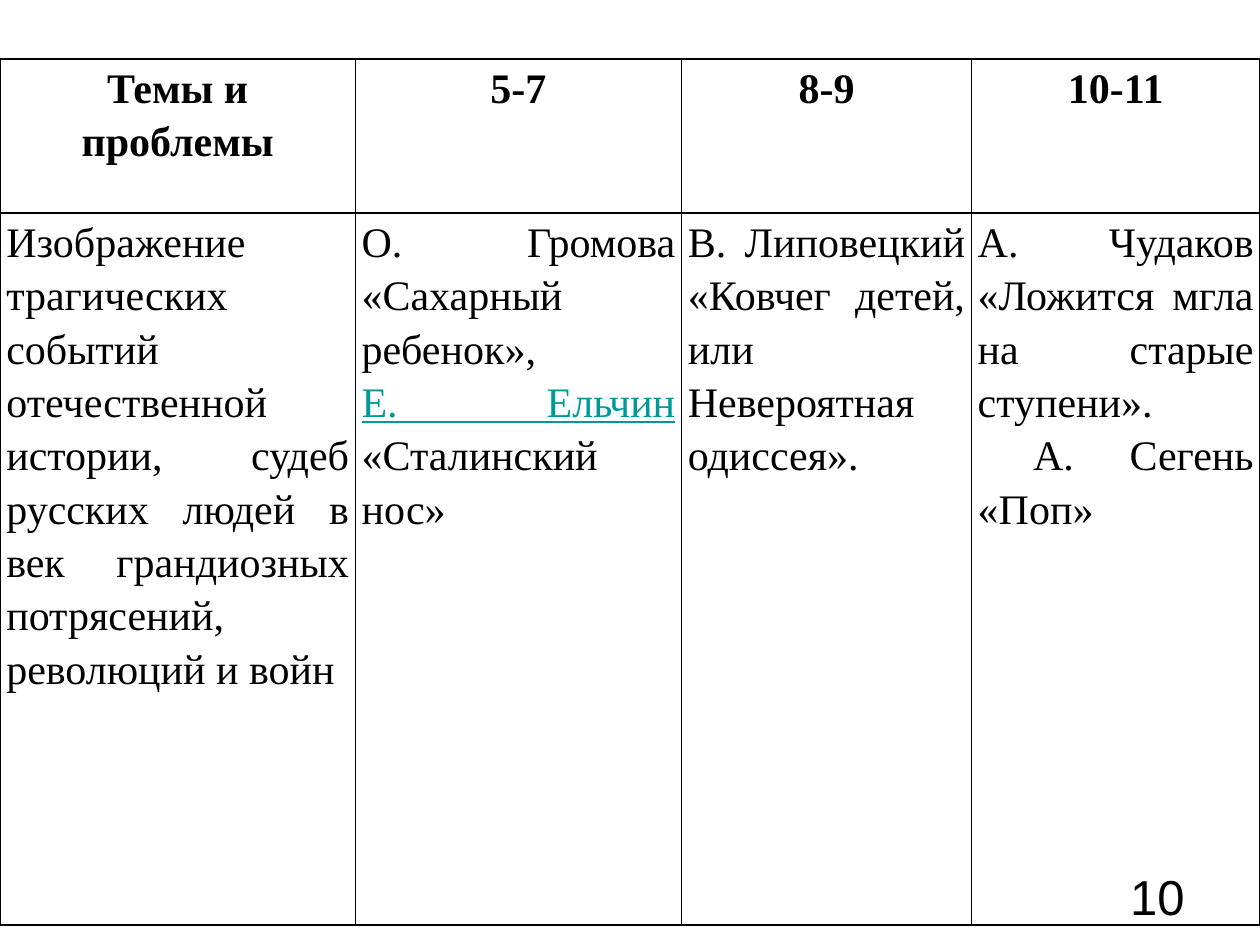
from dataclasses import dataclass
from typing import Optional

from lxml.etree import SubElement
from pptx import Presentation
from pptx.dml.color import RGBColor
from pptx.enum.text import PP_ALIGN as Align
from pptx.oxml.ns import qn
from pptx.util import Inches, Pt


@dataclass(frozen=True)
class Theme:
    text: str = "000000"
    link: str = "009999"
    table_font: str = "Times New Roman"
    number_font: str = "Arial"
    table_size: int = 24
    number_size: int = 28
    line_spacing: float = 1.15
    border_width: int = 1
    cell_margin: float = 0.05


@dataclass(frozen=True)
class Line:
    text: str
    link: str = ""
    indent: float = 0


@dataclass(frozen=True)
class Column:
    share: float
    heading: str
    body: tuple[Line, ...]


THEME = Theme()
SLIDE_WIDTH, SLIDE_HEIGHT = Inches(10), Inches(7.5)
TABLE_TOP = 0.47
ROW_HEIGHTS = (1.22, 5.65)
COLUMNS = (
    Column(0.282, "Темы и проблемы", (
        Line("Изображение трагических событий отечественной истории, судеб "
             "русских людей в век грандиозных потрясений, революций и войн"),
    )),
    Column(0.259, "5-7", (
        Line("О. Громова «Сахарный ребенок»,"),
        Line(" «Сталинский нос»", link="Е. Ельчин"),
    )),
    Column(0.23, "8-9", (
        Line("В. Липовецкий «Ковчег детей, или Невероятная одиссея»."),
    )),
    Column(0.229, "10-11", (
        Line("А. Чудаков «Ложится мгла на старые ступени»."),
        Line("А. Сегень «Поп»", indent=0.44),
    )),
)


def style_paragraph(paragraph, font_name: str, size: int, alignment, bold: bool = False) -> None:
    paragraph.alignment = alignment
    font = paragraph.font
    font.name, font.size, font.bold = font_name, Pt(size), bold
    font.color.rgb = RGBColor.from_string(THEME.text)


def add_borders(cell) -> None:
    properties = cell._tc.get_or_add_tcPr()
    for position, side in enumerate(("a:lnL", "a:lnR", "a:lnT", "a:lnB")):
        line = SubElement(properties, qn(side), w=str(Pt(THEME.border_width)))
        fill = SubElement(line, qn("a:solidFill"))
        SubElement(fill, qn("a:srgbClr"), val=THEME.text)
        properties.insert(position, line)


def fill_cell(cell, lines: tuple[Line, ...], alignment, bold: bool = False) -> None:
    cell.fill.background()
    cell.margin_left = cell.margin_right = Inches(THEME.cell_margin)
    cell.margin_top = cell.margin_bottom = 0
    add_borders(cell)
    frame = cell.text_frame
    for index, line in enumerate(lines):
        paragraph = frame.add_paragraph() if index else frame.paragraphs[0]
        paragraph.line_spacing = THEME.line_spacing
        if line.indent:
            paragraph._p.get_or_add_pPr().set("indent", str(Inches(line.indent)))
        style_paragraph(paragraph, THEME.table_font, THEME.table_size, alignment, bold)
        if line.link:
            link = paragraph.add_run()
            link.text = line.link
            link.font.underline = True
            link.font.color.rgb = RGBColor.from_string(THEME.link)
        paragraph.add_run().text = line.text


def add_reading_table(slide, columns: tuple[Column, ...], theme: Optional[Theme] = None) -> None:
    table = slide.shapes.add_table(
        len(ROW_HEIGHTS), len(columns), 0, Inches(TABLE_TOP),
        SLIDE_WIDTH, Inches(sum(ROW_HEIGHTS))).table
    table.first_row = table.horz_banding = False
    for row, height in zip(table.rows, ROW_HEIGHTS):
        row.height = Inches(height)
    for index, column in enumerate(columns):
        table.columns[index].width = round(SLIDE_WIDTH * column.share)
        fill_cell(table.cell(0, index), (Line(column.heading),), Align.CENTER, bold=True)
        fill_cell(table.cell(1, index), column.body, Align.JUSTIFY)


def add_page_number(slide, number: int) -> None:
    box = slide.shapes.add_textbox(Inches(7.17), Inches(6.83), Inches(2.33), Inches(0.52))
    box.text_frame.word_wrap = True
    paragraph = box.text_frame.paragraphs[0]
    style_paragraph(paragraph, THEME.number_font, THEME.number_size, Align.RIGHT)
    paragraph.add_run().text = str(number)


def main() -> None:
    presentation = Presentation()
    presentation.slide_width, presentation.slide_height = SLIDE_WIDTH, SLIDE_HEIGHT
    slide = presentation.slides.add_slide(presentation.slide_layouts[6])
    add_page_number(slide, 10)
    add_reading_table(slide, COLUMNS)
    presentation.save("out.pptx")


if __name__ == "__main__":
    main()
